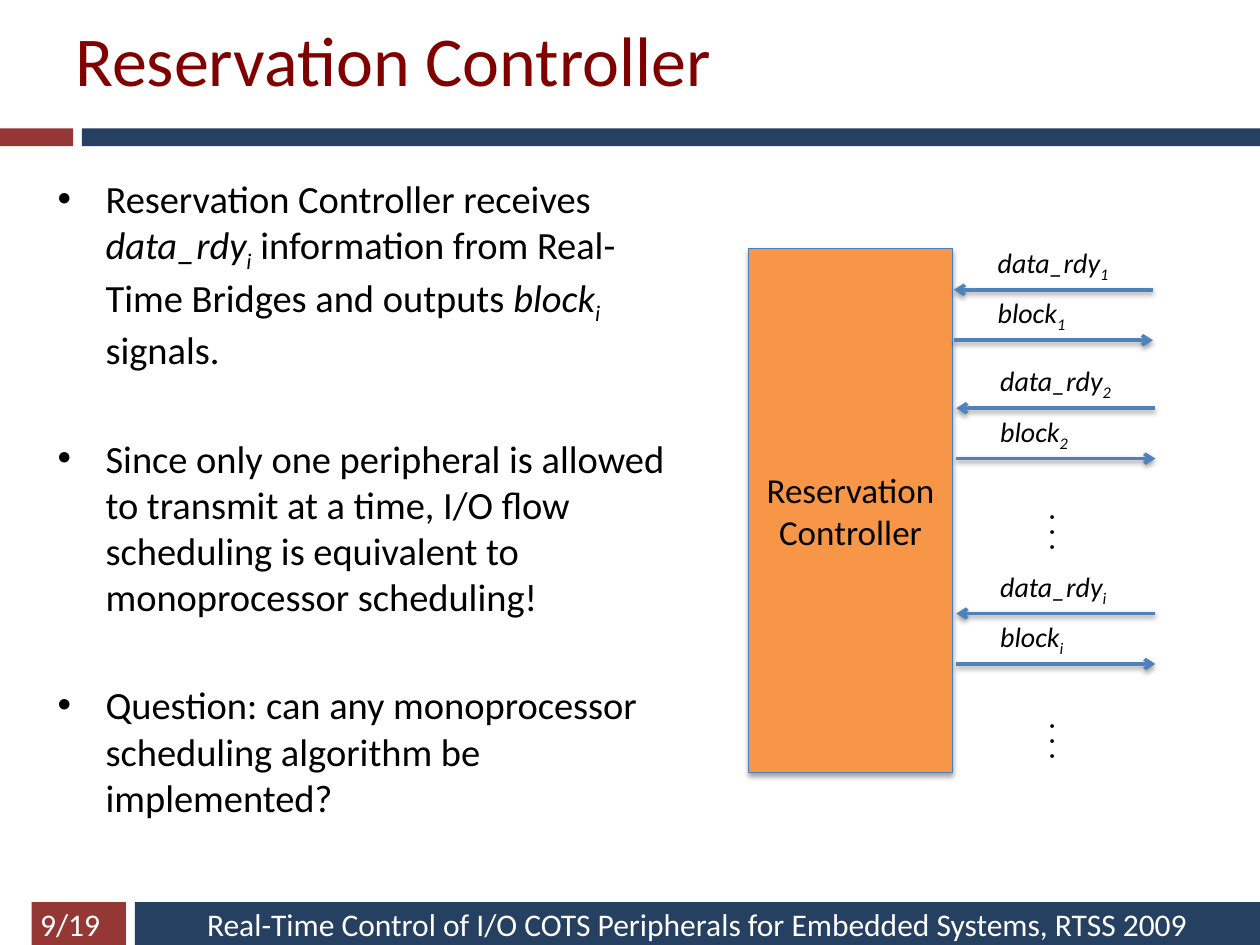
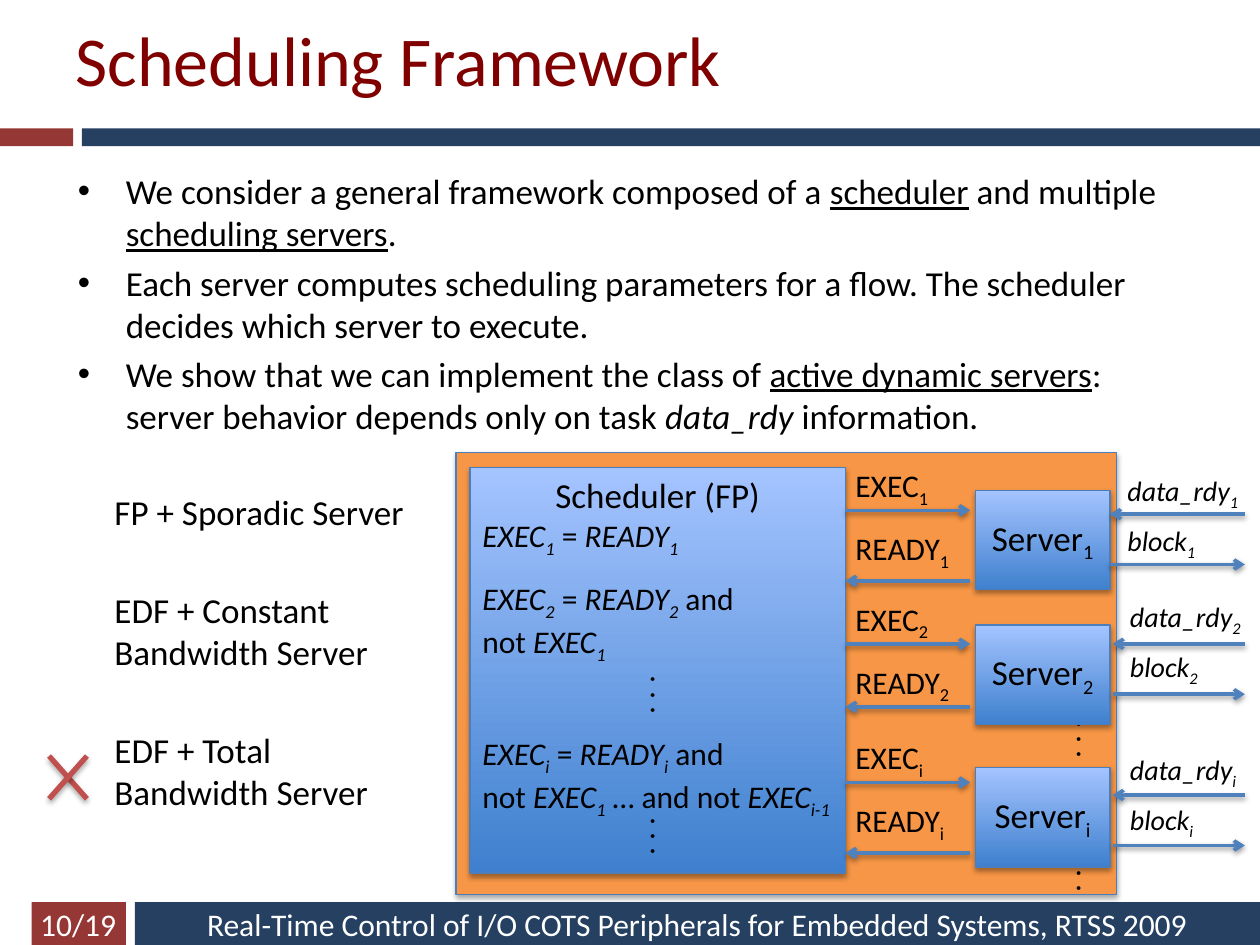
from dataclasses import dataclass

from lxml import etree
from pptx import Presentation
from pptx.dml.color import RGBColor
from pptx.enum.shapes import MSO_CONNECTOR, MSO_SHAPE
from pptx.enum.text import MSO_ANCHOR, MSO_AUTO_SIZE, PP_ALIGN
from pptx.oxml.ns import qn
from pptx.util import Inches, Pt

RECTANGLE = MSO_SHAPE.RECTANGLE
STRAIGHT = MSO_CONNECTOR.STRAIGHT
TOP, MIDDLE = MSO_ANCHOR.TOP, MSO_ANCHOR.MIDDLE
LEFT, CENTER = PP_ALIGN.LEFT, PP_ALIGN.CENTER
FIT_TEXT = MSO_AUTO_SIZE.SHAPE_TO_FIT_TEXT

COLUMNS, ROWS = 100, 75
CELL = Inches(0.1)
FONT = "Calibri"
RED, NAVY, TITLE_RED = "953735", "254061", "800000"
ORANGE, EDGE, ARROW, CROSS = "F79646", "4B7EBC", "4F81BD", "C0504D"
DARK_BLUE, LIGHT_BLUE = "3F80CE", "A4C4FF"
BLACK, WHITE = "000000", "FFFFFF"
SHAPE_SHADOW, LINE_SHADOW = (35, 1.8), (38, 1.6)
FOOTER = "Real-Time Control of I/O COTS Peripherals for Embedded Systems, RTSS 2009"


@dataclass
class Box:
    left: float
    top: float
    width: float
    height: float

    def inside(self, column, row, width, height):
        return Box(self.left + column, self.top + row, width, height)

    def lengths(self):
        return [cells(n) for n in (self.left, self.top, self.width, self.height)]


SLIDE = Box(0, 0, COLUMNS, ROWS)


def cells(count):
    return int(count * CELL)


def colour(code):
    return RGBColor.from_string(code)


def set_all(target, values):
    for name, value in values.items():
        setattr(target, name, value)


def add_effects(shape, shadow=None):
    effects = etree.SubElement(shape._element.spPr, qn("a:effectLst"))
    if shadow:
        alpha, distance = shadow
        outer = etree.SubElement(
            effects, qn("a:outerShdw"), blurRad=str(Pt(3.1)), dist=str(Pt(distance)),
            dir="5400000", rotWithShape="0")
        tint = etree.SubElement(outer, qn("a:srgbClr"), val=BLACK)
        etree.SubElement(tint, qn("a:alpha"), val=str(alpha * 1000))


def add_bullet(para):
    properties = para._p.get_or_add_pPr()
    indent = Inches(0.38)
    properties.set("marL", str(indent))
    properties.set("indent", str(-indent))
    etree.SubElement(properties, qn("a:buFont"), typeface="Arial")
    etree.SubElement(properties, qn("a:buChar"), char="•")


def indexed(name, index, style="i"):
    return [(name, style), (index, style + "s")]


def write(shape, paragraphs, size, ink=BLACK, align=LEFT, anchor=TOP, gap=0,
          bullets=False, wrap=True):
    frame = shape.text_frame
    set_all(frame, {"word_wrap": wrap, "vertical_anchor": anchor})
    for number, spans in enumerate(paragraphs):
        para = frame.add_paragraph() if number else frame.paragraphs[0]
        set_all(para, {"alignment": align, "space_before": Pt(gap if number else 0)})
        if bullets:
            add_bullet(para)
        for text, style in spans:
            span = para.add_run()
            span.text = text
            set_all(span.font, {"name": FONT, "size": Pt(size), "italic": "i" in style,
                                "underline": "u" in style})
            span.font.color.rgb = colour(ink)
            if "s" in style:
                span._r.get_or_add_rPr().set("baseline", "-25000")


def add_text(page, box, paragraphs, size, **options):
    shape = page.shapes.add_textbox(*box.lengths())
    write(shape, paragraphs, size, **options)
    return shape


def add_label(page, box, spans, size, **options):
    shape = add_text(page, box, [spans], size, wrap=False, **options)
    shape.text_frame.auto_size = FIT_TEXT
    return shape


def add_dots(page, box):
    add_label(page, box, [(". . .", "")], 18).rotation = 270


def add_band(page, box, fill):
    band = page.shapes.add_shape(RECTANGLE, *box.lengths())
    band.fill.solid()
    band.fill.fore_color.rgb = colour(fill)
    band.line.fill.background()
    add_effects(band)
    return band


def add_block(page, box, fill=None):
    block = page.shapes.add_shape(RECTANGLE, *box.lengths())
    if fill:
        block.fill.solid()
        block.fill.fore_color.rgb = colour(fill)
    else:
        block.fill.gradient()
        block.fill.gradient_angle = 90
        for stop, code in zip(block.fill.gradient_stops, (DARK_BLUE, LIGHT_BLUE)):
            stop.color.rgb = colour(code)
    block.line.color.rgb = colour(EDGE)
    block.line.width = Pt(0.75)
    add_effects(block, SHAPE_SHADOW)
    return block


def add_line(page, start, end, ink=ARROW, width=2, shadow=LINE_SHADOW, arrow=True):
    line = page.shapes.add_connector(STRAIGHT, *[cells(n) for n in (*start, *end)])
    line.line.color.rgb = colour(ink)
    line.line.width = Pt(width)
    if arrow:
        etree.SubElement(line.line._get_or_add_ln(), qn("a:tailEnd"), type="arrow")
    add_effects(line, shadow)


def add_exchange(page, left, right, upper, lower, inward_first):
    pairs = [((left, upper), (right, upper)), ((left, lower), (right, lower))]
    if inward_first:
        pairs[0] = pairs[0][::-1]
    else:
        pairs[1] = pairs[1][::-1]
    for start, end in pairs:
        add_line(page, start, end)


def add_signals(page, box, index, label_column, drop):
    for row, name, width in ((0, "data_rdy", 11.4), (4, "block", 8)):
        add_label(page, box.inside(label_column, row, width, 3.7),
                  indexed(name, index), 16)
    upper = box.top + drop
    add_exchange(page, box.left, box.left + box.width, upper, upper + 4, True)


def add_page(deck, title, number, number_width):
    page = deck.slides.add_slide(deck.slide_layouts[6])
    for row, height, left, red_width, blue_left in (
            (10.2, 1.4, 0, 5.8, 6.5), (71.6, 3.4, 2.5, 7.5, 10.7)):
        add_band(page, SLIDE.inside(left, row, red_width, height), RED)
        band = add_band(page, SLIDE.inside(blue_left, row, COLUMNS - blue_left, height), NAVY)
    write(band, [[(FOOTER, "")]], 18, ink=WHITE, align=CENTER, anchor=MIDDLE)
    add_text(page, SLIDE.inside(5, -1.6, 90, 12.5), [[(title, "")]], 40,
             ink=TITLE_RED, anchor=MIDDLE)
    add_label(page, SLIDE.inside(2.2, 71.3, number_width, 4), [(number, "")], 18, ink=WHITE)
    return page


def place_controller(page, box):
    controller = add_block(page, box.inside(0, 0, 16.2, box.height), ORANGE)
    write(controller, [[("Reservation Controller", "")]], 20, align=CENTER, anchor=MIDDLE)
    for index, column, row in (("1", 16.3, -0.7), ("2", 16.5, 8.7), ("i", 16.5, 25)):
        add_signals(page, box.inside(column, row, 15.8, 8), index, 2.5, 4)
    for row in (20.5, 37.1):
        add_dots(page, box.inside(20.7, row, 5.1, 4))


def place_scheduler(page, box):
    write(add_block(page, box), [[("Scheduler (FP)", "")]], 20, align=CENTER)

    def ready(index):
        return indexed("EXEC", index) + [(" = ", "")] + indexed("READY", index)

    negated = [("not ", "")] + indexed("EXEC", "1")
    rules = (
        (3.4, 24, [ready("1")]),
        (8.4, 29, [ready("2") + [(" and", "")], negated]),
        (20.7, 30.8, [ready("i") + [(" and", "")],
                      negated + [(" … and not ", "")] + indexed("EXEC", "i-1")]),
    )
    for row, width, paragraphs in rules:
        add_text(page, box.inside(0, row, width, 3.7 * len(paragraphs)), paragraphs, 18)
    for row in (16, 27.2):
        add_dots(page, box.inside(11.1, row, 5.1, 4))


def place_flow(page, box, index, server_row, exec_row, ready_drop, data_row, drop, gap):
    server = add_block(page, box.inside(41.2, server_row, 10.7, 7.9))
    write(server, [indexed("Server", index, "")], 20, align=CENTER, anchor=MIDDLE)
    for name, row, width in (("EXEC", 0, 10), ("READY", 5, 11.9)):
        add_text(page, box.inside(30.7, exec_row + row, width, 4),
                 [indexed(name, index, "")], 18)
    top = box.top + exec_row
    add_exchange(page, box.left + 30.9, box.left + 40.8, top + 4, top + ready_drop, False)
    add_signals(page, box.inside(51.9 + gap, data_row, 10.7 - gap, 8), index, 0.4, drop)


def place_framework(page, box):
    add_block(page, box, ORANGE)
    place_scheduler(page, box.inside(1.1, 1.2, 29.8, 32.2))
    for row in (20.7, 31.4):
        add_dots(page, box.inside(46, row, 5.1, 4))
    flows = (
        ("1", 3, 0.6, 9.6, 1.2, 3.7, 0),
        ("2", 13.7, 11.2, 9, 11.2, 4, 0.2),
        ("i", 25, 22.2, 9.6, 23.3, 3.9, 0.2),
    )
    for flow in flows:
        place_flow(page, box, *flow)


def place_pairings(page, box):
    names = ("FP + Sporadic Server", "EDF + Constant Bandwidth Server",
             "EDF + Total Bandwidth Server")
    add_text(page, box.inside(4.2, 0, box.width - 4.2, box.height),
             [[(name, "")] for name in names], 20, gap=32)
    cross = box.inside(0, 21.6, 3, 3.4)
    right, bottom = cross.left + cross.width, cross.top + cross.height
    for start, end in (((cross.left, cross.top), (right, bottom)),
                       ((cross.left, bottom), (right, cross.top))):
        add_line(page, start, end, CROSS, 3, SHAPE_SHADOW, arrow=False)


def build_controller_page(deck):
    page = add_page(deck, "Reservation Controller", "9/19", 6.8)
    points = [
        [("Reservation Controller receives ", ""), *indexed("data_rdy", "i"),
         (" information from Real-Time Bridges and outputs ", ""),
         *indexed("block", "i"), (" signals.", "")],
        [("Since only one peripheral is allowed to transmit at a time, I/O flow "
          "scheduling is equivalent to monoprocessor scheduling!", "")],
        [("Question: can any monoprocessor scheduling algorithm be implemented?", "")],
    ]
    add_text(page, SLIDE.inside(3.6, 13.4, 51.8, 51.7), points, 22, gap=35.5, bullets=True)
    place_controller(page, SLIDE.inside(59.4, 19.7, 32.3, 41.6))


def build_framework_page(deck):
    page = add_page(deck, "Scheduling Framework", "10/19", 8.1)
    points = [
        [("We consider a general framework composed of a ", ""), ("scheduler", "u"),
         (" and multiple ", ""), ("scheduling servers", "u"), (".", "")],
        [("Each server computes scheduling parameters for a flow. The scheduler "
          "decides which server to execute.", "")],
        [("We show that we can implement the class of ", ""),
         ("active dynamic servers", "u"),
         (": server behavior depends only on task ", ""), ("data_rdy", "i"),
         (" information.", "")],
    ]
    add_text(page, SLIDE.inside(5.2, 13, 90, 23.7), points, 20, gap=4, bullets=True)
    place_pairings(page, SLIDE.inside(3.9, 38.4, 30.4, 29.4))
    place_framework(page, SLIDE.inside(36.2, 35.9, 52.4, 35.1))


def main():
    deck = Presentation()
    deck.slide_width, deck.slide_height = cells(COLUMNS), cells(ROWS)
    build_controller_page(deck)
    build_framework_page(deck)
    deck.save("out.pptx")


if __name__ == "__main__":
    main()
